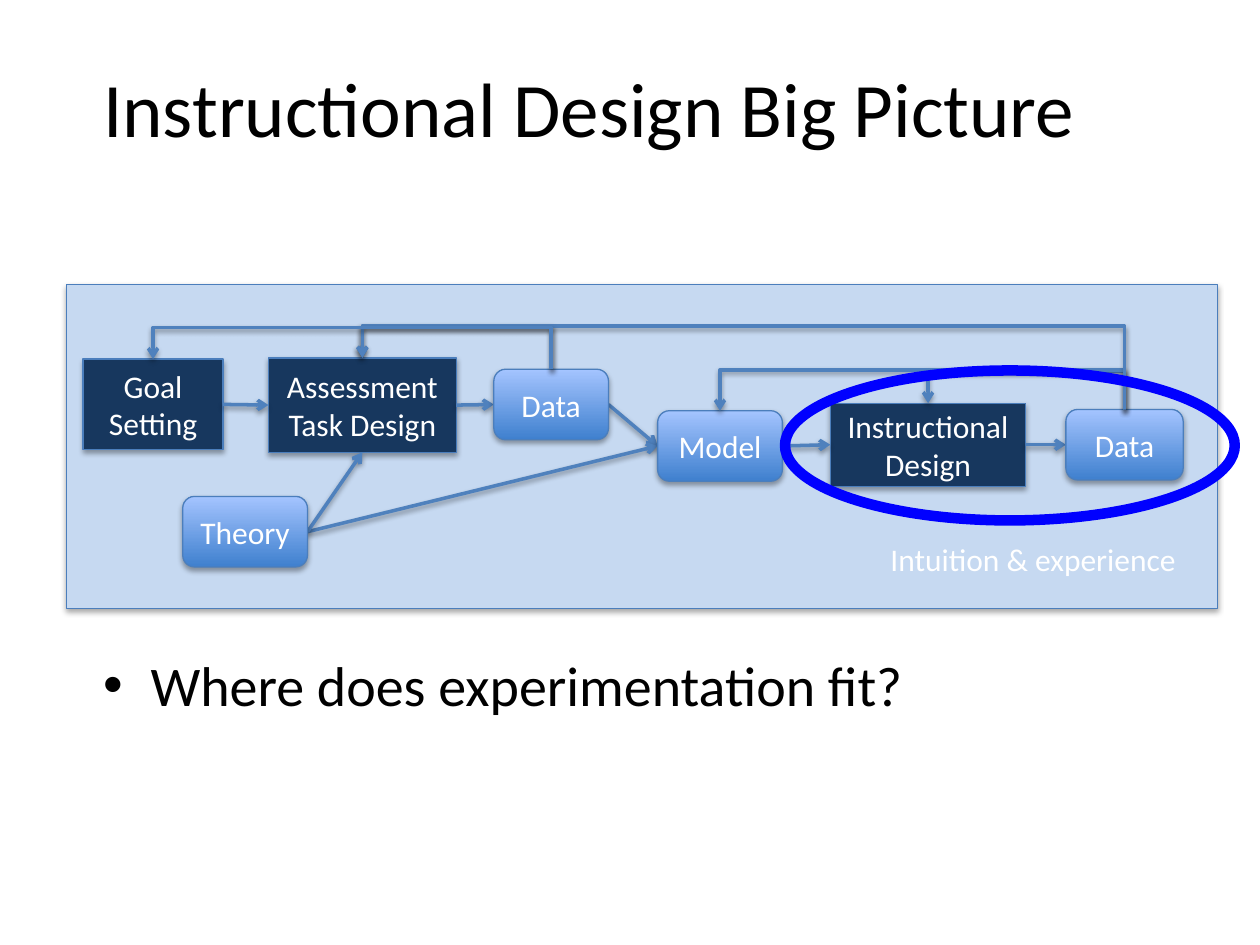
from lxml import etree
from pptx import Presentation
from pptx.dml.color import RGBColor
from pptx.enum import shapes, text
from pptx.oxml import ns, parse_xml
from pptx.util import Pt

TITLE = "Instructional Design Big Picture"
QUESTION = "Where does experimentation fit?"
NOTE = "Intuition & experience"
FONT = "Calibri"

BLACK = RGBColor(0x00, 0x00, 0x00)
WHITE = RGBColor(0xFF, 0xFF, 0xFF)
PALE = RGBColor(0xC6, 0xD9, 0xF1)
NAVY = RGBColor(0x17, 0x37, 0x5E)
EDGE = RGBColor(0x4B, 0x7E, 0xBC)
ARROW = RGBColor(0x4F, 0x81, 0xBD)
DEEP = RGBColor(0x3F, 0x80, 0xCE)
LIGHT = RGBColor(0xA4, 0xC4, 0xFF)
RING = RGBColor(0x00, 0x00, 0xFF)

# Boxes are left, top, width, height in points.
TITLE_BOX = (51.8, 16.6, 625, 88.6)
BODY_BOX = (51.8, 368, 625, 114.5)
PANEL_BOX = (38.2, 162.7, 657.4, 185)
NOTE_BOX = (492.5, 305.3, 186.5, 29)
RING_BOX = (448.6, 211.7, 257, 85.7)

STEPS = {
    "goal": ("Goal\nSetting", (47.5, 205.2, 79.9, 51.8)),
    "task": ("Assessment Task Design", (153.4, 204.5, 107.3, 54)),
    "design": ("Instructional Design", (474.5, 230.4, 111.6, 47.5)),
}
SOURCES = {
    "theory": ("Theory", (104.4, 283.7, 71.3, 40.3)),
    "early data": ("Data", (282.2, 211, 65.5, 40.3)),
    "model": ("Model", (375.8, 234.7, 71.3, 40.3)),
    "late data": ("Data", (609.1, 234, 67, 40.3)),
}
NODES = {**STEPS, **SOURCES}

LINKS = [  # from the right side of one node to a side of another
    ("goal", "task", "left"),
    ("task", "early data", "left"),
    ("early data", "model", "left"),
    ("theory", "model", "left"),
    ("model", "design", "left"),
    ("design", "late data", "left"),
    ("theory", "task", "bottom"),
]
FEEDBACK = [  # from the top of one node to the top of another, with rail height
    ("early data", "task", 186.5),
    ("late data", "design", 212),
    ("late data", "model", 211.7),
    ("late data", "task", 186.2),
    ("early data", "goal", 187.2),
]


def write(frame, words, size=18, color=WHITE, align=text.PP_ALIGN.CENTER,
          anchor=text.MSO_ANCHOR.MIDDLE):
    frame.word_wrap = True
    frame.vertical_anchor = anchor
    frame.text = words
    for para in frame.paragraphs:
        para.alignment = align
        for span in para.runs:
            span.font.name = FONT
            span.font.size = Pt(size)
            span.font.color.rgb = color


def place(item, box):
    item.left, item.top, item.width, item.height = map(Pt, box)


def add_shadow(properties, opacity, distance):
    for old in properties.findall(ns.qn("a:effectLst")):
        properties.remove(old)
    properties.append(parse_xml(
        f'<a:effectLst {ns.nsdecls("a")}><a:outerShdw blurRad="{Pt(3.1)}" '
        f'dist="{Pt(distance)}" dir="5400000" rotWithShape="0">'
        f'<a:srgbClr val="000000"><a:alpha val="{opacity * 1000}"/></a:srgbClr>'
        '</a:outerShdw></a:effectLst>'))


def add_box(page, kind, box, fill=None):
    """Add a shadowed shape; without a fill colour it gets the gradient."""
    shape = page.shapes.add_shape(kind, *map(Pt, box))
    if fill is not None:
        shape.fill.solid()
        shape.fill.fore_color.rgb = fill
    else:
        shape.fill.gradient()
        shape.fill.gradient_angle = 90
        for stop, color, position in zip(shape.fill.gradient_stops, (DEEP, LIGHT), (0, 1)):
            stop.color.rgb = color
            stop.position = position
    shape.line.color.rgb = EDGE
    shape.line.width = Pt(0.75)
    add_shadow(shape._element.spPr, 35, 1.8)
    return shape


def add_nodes(page, nodes, kind, fill=None):
    for words, box in nodes.values():
        write(add_box(page, kind, box, fill).text_frame, words)


def side(name, which):
    """Return the midpoint of one side of a node."""
    left, top, width, height = NODES[name][1]
    x, y = {"left": (0, 0.5), "right": (1, 0.5), "top": (0.5, 0), "bottom": (0.5, 1)}[which]
    return left + x * width, top + y * height


def add_arrow(page, kind, start, end):
    arrow = page.shapes.add_connector(kind, *map(Pt, (*start, *end)))
    arrow.line.color.rgb = ARROW
    arrow.line.width = Pt(2)
    etree.SubElement(arrow.line._get_or_add_ln(), ns.qn("a:tailEnd"), type="arrow")
    add_shadow(arrow._element.spPr, 38, 1.6)
    return arrow


def add_feedback(page, start, end, rail):
    """Run up from start to the rail, left along it and down to end."""
    (x1, y1), (x2, y2) = start, end
    rise, run = y1 - y2, x1 - x2
    x, y = (x1 + x2) / 2, (y1 + y2) / 2
    # The elbow is laid out on its side, then turned a quarter to the left.
    arrow = add_arrow(page, shapes.MSO_CONNECTOR.ELBOW,
                      (x - rise / 2, y + run / 2), (x + rise / 2, y - run / 2))
    properties = arrow._element.spPr
    properties.find(ns.qn("a:xfrm")).set("rot", "16200000")
    bend = round((y1 - rail) / rise * 100000)
    etree.SubElement(properties.find(".//" + ns.qn("a:avLst")), ns.qn("a:gd"),
                     name="adj1", fmla=f"val {bend}")


def main():
    deck = Presentation()
    deck.slide_width, deck.slide_height = Pt(720), Pt(540)
    page = deck.slides.add_slide(deck.slide_layouts[1])
    body = page.placeholders[1]
    place(page.shapes.title, TITLE_BOX)
    write(page.shapes.title.text_frame, TITLE, size=44, color=BLACK,
          align=text.PP_ALIGN.LEFT)
    place(body, BODY_BOX)
    write(body.text_frame, QUESTION, size=32, color=BLACK,
          align=text.PP_ALIGN.LEFT, anchor=text.MSO_ANCHOR.TOP)

    preset = shapes.MSO_SHAPE
    add_box(page, preset.RECTANGLE, PANEL_BOX, PALE)
    add_nodes(page, STEPS, preset.FLOWCHART_PROCESS, NAVY)
    for origin, target, entry in LINKS:
        add_arrow(page, shapes.MSO_CONNECTOR.STRAIGHT,
                  side(origin, "right"), side(target, entry))
    note = page.shapes.add_textbox(*map(Pt, NOTE_BOX))
    write(note.text_frame, NOTE, align=text.PP_ALIGN.RIGHT, anchor=text.MSO_ANCHOR.TOP)
    add_nodes(page, SOURCES, preset.FLOWCHART_ALTERNATE_PROCESS)
    for origin, target, rail in FEEDBACK:
        add_feedback(page, side(origin, "top"), side(target, "top"), rail)

    ring = page.shapes.add_shape(preset.OVAL, *map(Pt, RING_BOX))
    ring.shadow.inherit = False
    ring.fill.background()
    ring.line.color.rgb = RING
    ring.line.width = Pt(6)
    deck.save("out.pptx")


if __name__ == "__main__":
    main()
